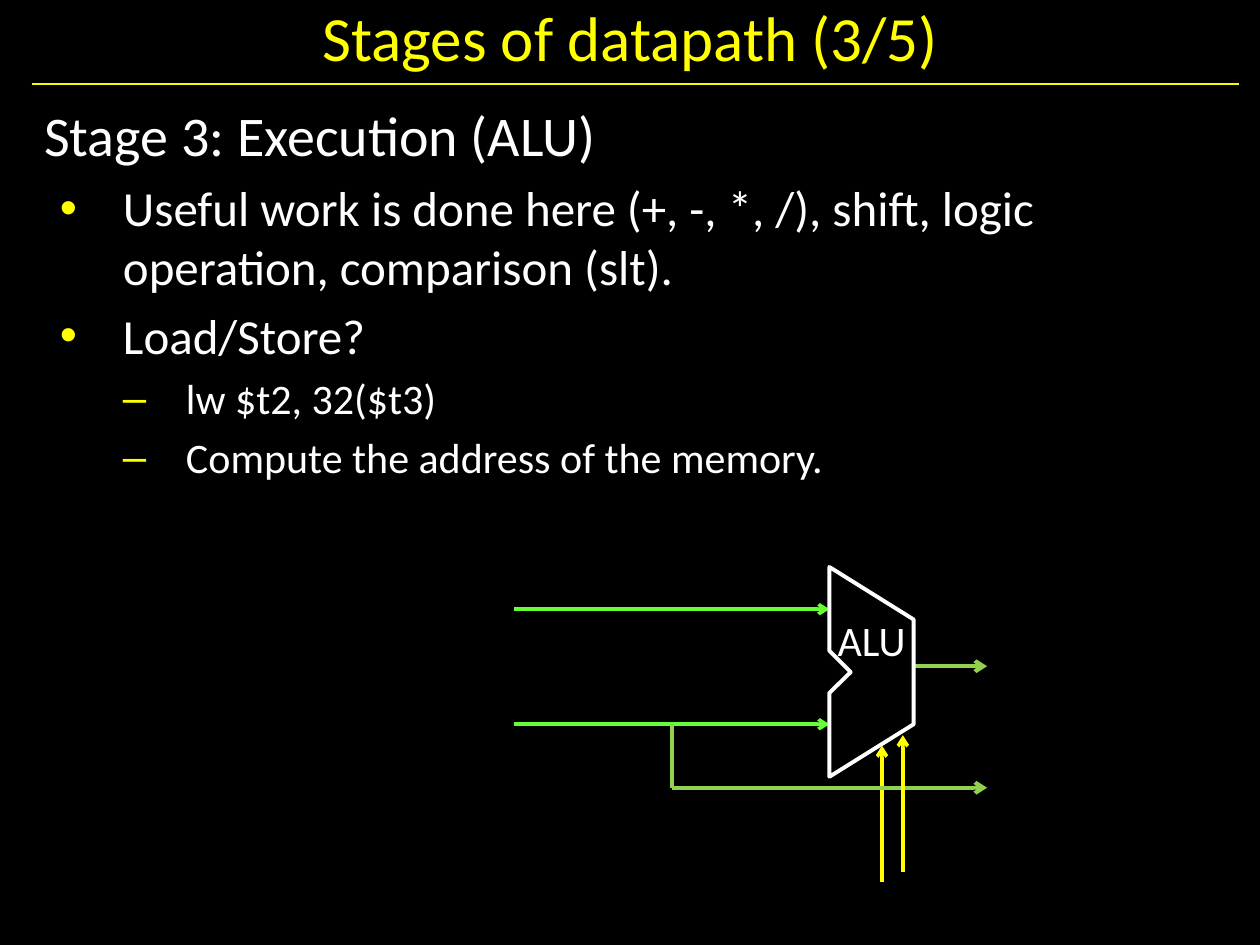
from lxml import etree
from pptx import Presentation
from pptx.dml.color import RGBColor
from pptx.enum.shapes import MSO_CONNECTOR
from pptx.enum.text import MSO_ANCHOR, PP_ALIGN
from pptx.oxml.ns import qn
from pptx.util import Cm, Pt

STRAIGHT = MSO_CONNECTOR.STRAIGHT
TOP, MIDDLE = MSO_ANCHOR.TOP, MSO_ANCHOR.MIDDLE
LEFT, CENTER = PP_ALIGN.LEFT, PP_ALIGN.CENTER

FONT = "Calibri"
BLACK, WHITE, YELLOW = "000000", "FFFFFF", "FFFF00"
RULE, INPUT, OUTPUT = "F9F900", "66FF33", "92D050"

# Content: (level, text)
TITLE = "Stages of datapath (3/5)"
BODY = [
    (0, "Stage 3: Execution (ALU)"),
    (1, "Useful work is done here (+, -, *, /), shift, logic operation, comparison (slt)."),
    (1, "Load/Store?"),
    (2, "lw $t2, 32($t3)"),
    (2, "Compute the address of the memory."),
]
# Level formats: (size, left margin in cm, bullet)
LEVELS = [(32, 0, None), (28, 1.59, "•"), (24, 2.86, "–")]
HANGING = 1.27

# Diagram, in cm
ALU_LEFT, ALU_RIGHT = 16.72, 18.42
ALU_OUTLINE = [
    (ALU_LEFT, 11.43), (ALU_RIGHT, 12.49), (ALU_RIGHT, 14.6), (ALU_LEFT, 15.66),
    (ALU_LEFT, 13.97), (17.15, 13.55), (ALU_LEFT, 13.12),
]
INPUT_LEFT, OUTPUT_RIGHT = 10.36, 19.9
UPPER_Y, LOWER_Y, RESULT_Y, BYPASS_Y = 12.28, 14.6, 13.43, 15.88
BRANCH_X = 13.55
# Wires: (start, end, colour, width, arrow)
WIRES = [
    ((INPUT_LEFT, UPPER_Y), (ALU_LEFT, UPPER_Y), INPUT, 2, True),
    ((INPUT_LEFT, LOWER_Y), (ALU_LEFT, LOWER_Y), INPUT, 2, True),
    ((17.78, 17.78), (17.78, 15.03), YELLOW, 2, True),
    ((ALU_RIGHT, RESULT_Y), (OUTPUT_RIGHT, RESULT_Y), OUTPUT, 2.25, True),
    ((BRANCH_X, LOWER_Y), (BRANCH_X, BYPASS_Y), OUTPUT, 2.25, False),
    ((BRANCH_X, BYPASS_Y), (OUTPUT_RIGHT, BYPASS_Y), OUTPUT, 2.25, True),
    ((18.2, 17.57), (18.2, 14.82), YELLOW, 2, True),
]


def color(value):
    return RGBColor.from_string(value)


def add_bullet(para, bullet, margin):
    properties = para._p.get_or_add_pPr()
    properties.set("marL", str(Cm(margin)))
    properties.set("indent", str(-Cm(HANGING)))
    bullet_color = etree.SubElement(properties, qn("a:buClr"))
    etree.SubElement(bullet_color, qn("a:srgbClr")).set("val", YELLOW)
    etree.SubElement(properties, qn("a:buFont")).set("typeface", "Arial")
    etree.SubElement(properties, qn("a:buChar")).set("char", bullet)


def write(para, text, *, size, fill=WHITE, align=LEFT, before=0, spacing=None):
    para.alignment = align
    para.space_before = Pt(before)
    if spacing:
        para.line_spacing = spacing
    span = para.add_run()
    span.text = text
    span.font.name = FONT
    span.font.size = Pt(size)
    span.font.color.rgb = color(fill)


def add_box(page, left, top, width, height, anchor=TOP, wrap=True):
    box = page.shapes.add_textbox(Cm(left), Cm(top), Cm(width), Cm(height))
    frame = box.text_frame
    frame.word_wrap = wrap
    frame.vertical_anchor = anchor
    return frame


def add_wire(page, start, end, stroke, width, arrow=False):
    wire = page.shapes.add_connector(STRAIGHT, *map(Cm, start + end))
    wire.line.color.rgb = color(stroke)
    wire.line.width = Pt(width)
    if arrow:
        etree.SubElement(wire.line._get_or_add_ln(), qn("a:tailEnd")).set("type", "arrow")
    etree.SubElement(wire._element.spPr, qn("a:effectLst"))


def add_alu(page):
    points = [(Cm(x), Cm(y)) for x, y in ALU_OUTLINE]
    builder = page.shapes.build_freeform(*points[0])
    builder.add_line_segments(points[1:], close=True)
    alu = builder.convert_to_shape()
    alu.shadow.inherit = False
    alu.fill.background()
    alu.line.color.rgb = color(WHITE)
    alu.line.width = Pt(2.25)


def main():
    deck = Presentation()
    deck.slide_width, deck.slide_height = Cm(25.4), Cm(19.05)
    page = deck.slides.add_slide(deck.slide_layouts[6])
    page.background.fill.solid()
    page.background.fill.fore_color.rgb = color(BLACK)

    # Title and rule
    add_wire(page, (0.64, 1.7), (24.98, 1.7), RULE, 1)
    title = add_box(page, 0.64, 0, 24.13, 1.48, MIDDLE)
    write(title.paragraphs[0], TITLE, size=36, fill=YELLOW, align=CENTER)

    # Body text
    body = add_box(page, 0.64, 1.91, 24.13, 15.67)
    for number, (level, text) in enumerate(BODY):
        para = body.add_paragraph() if number else body.paragraphs[0]
        size, margin, bullet = LEVELS[level]
        para.level = level
        write(para, text, size=size, before=size * 0.2)
        if bullet:
            add_bullet(para, bullet, margin)

    # ALU with its wires
    for wire in WIRES:
        add_wire(page, *wire)
    add_alu(page)
    # The label is as wide as the ALU, so its word stays on one line
    label = add_box(page, ALU_LEFT, 12.28, ALU_RIGHT - ALU_LEFT, 1.09, MIDDLE, wrap=False)
    label.margin_left = label.margin_right = label.margin_top = label.margin_bottom = 0
    write(label.paragraphs[0], "ALU", size=24, align=CENTER, spacing=1.16)

    deck.save("out.pptx")


if __name__ == "__main__":
    main()
